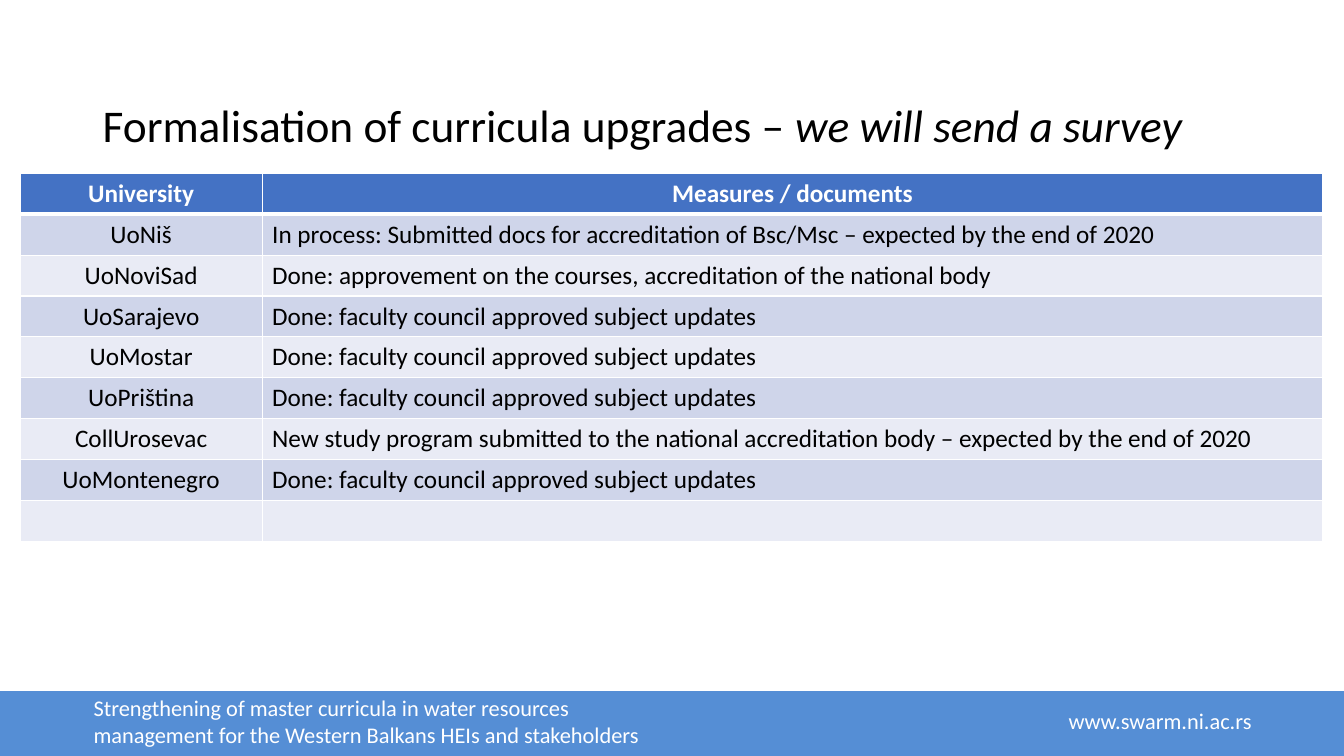
from lxml import etree
from pptx import Presentation, util as u
from pptx.dml.color import RGBColor
from pptx.enum import shapes, text
from pptx.oxml.ns import qn

COLORS = {
    "white": "FFFFFF",
    "black": "000000",
    "footer": "558ED5",
    "header": "4472C4",
    "odd_row": "CFD5EA",
    "even_row": "E9EBF5",
}
APPROVED = "Done: faculty council approved subject updates"
ROWS = [
    ("University", "Measures / documents"),
    ("UoNiš", "In process: Submitted docs for accreditation of Bsc/Msc – expected by the end of 2020"),
    ("UoNoviSad", "Done: approvement on the courses, accreditation of the national body"),
    ("UoSarajevo", APPROVED),
    ("UoMostar", APPROVED),
    ("UoPriština", APPROVED),
    ("CollUrosevac", "New study program submitted to the national accreditation body – expected by the end of 2020"),
    ("UoMontenegro", APPROVED),
    ("", ""),
]


def rgb(name):
    return RGBColor.from_string(COLORS[name])


def write(paragraph, words, font="Calibri", size=18, color="black", bold=False, italic=False, align=None):
    if align is not None:
        paragraph.alignment = align
    run = paragraph.add_run()
    run.text = words
    run.font.name = font
    run.font.size = u.Pt(size)
    run.font.color.rgb = rgb(color)
    run.font.bold = bold
    run.font.italic = italic


class SlideBuilder:
    def __init__(self, slide):
        self.slide = slide

    def bar(self, box, color):
        shape = self.slide.shapes.add_shape(
            shapes.MSO_SHAPE.FLOWCHART_PROCESS, *map(u.Inches, box))
        shape.shadow.inherit = False
        shape.fill.solid()
        shape.fill.fore_color.rgb = rgb(color)
        shape.line.fill.background()

    def text_box(self, box, runs, anchor=text.MSO_ANCHOR.TOP, spacing=1.0, right_inset=0.1, **style):
        frame = self.slide.shapes.add_textbox(*map(u.Inches, box)).text_frame
        frame.word_wrap = True
        frame.vertical_anchor = anchor
        frame.margin_right = u.Inches(right_inset)
        paragraph = frame.paragraphs[0]
        paragraph.line_spacing = spacing
        for words, extra in runs:
            write(paragraph, words, **style, **extra)

    def border(self, cell, side, width):
        properties = cell._tc.get_or_add_tcPr()
        line = etree.SubElement(properties, qn(f"a:{side}"), w=str(u.Pt(width)))
        fill = etree.SubElement(line, qn("a:solidFill"))
        etree.SubElement(fill, qn("a:srgbClr"), val=COLORS["white"])

    def table(self, box, widths, rows):
        table = self.slide.shapes.add_table(
            len(rows), len(widths), *map(u.Inches, box)).table
        for column, width in zip(table.columns, widths):
            column.width = u.Inches(width)
        for row_index, row in enumerate(rows):
            is_header = row_index == 0
            fill = "header" if is_header else "odd_row" if row_index % 2 else "even_row"
            for column_index, words in enumerate(row):
                cell = table.cell(row_index, column_index)
                for side in ("lnL", "lnR", "lnT", "lnB"):
                    thick = (is_header and side == "lnB") or (row_index == 1 and side == "lnT")
                    self.border(cell, side, 3 if thick else 1)
                cell.fill.solid()
                cell.fill.fore_color.rgb = rgb(fill)
                if words:
                    centered = is_header or column_index == 0
                    write(cell.text_frame.paragraphs[0], words, bold=is_header,
                          color="white" if is_header else "black",
                          align=text.PP_ALIGN.CENTER if centered else text.PP_ALIGN.LEFT)


def main():
    presentation = Presentation()
    presentation.slide_width = u.Inches(13.33)
    presentation.slide_height = u.Inches(7.5)
    builder = SlideBuilder(presentation.slides.add_slide(presentation.slide_layouts[6]))

    builder.bar((0, 6.86, 13.33, 0.64), "footer")
    builder.text_box(
        (0.83, 6.84, 6.15, 0.64),
        [("Strengthening of master curricula in water resources "
          "management for the Western Balkans HEIs and stakeholders", {})],
        right_inset=0.4, size=16, color="white")
    builder.text_box((10.5, 6.97, 2.16, 0.4), [("www.swarm.ni.ac.rs", {})], size=16, color="white")
    builder.text_box(
        (0.92, 0.69, 11.86, 1.16),
        [("Formalisation of curricula upgrades – ", {}), ("we will send a survey", {"italic": True})],
        anchor=text.MSO_ANCHOR.MIDDLE, spacing=0.9, size=32.4)
    builder.table((0.2, 1.72, 12.93, 3.65), (2.4, 10.52), ROWS)

    presentation.save("out.pptx")


if __name__ == "__main__":
    main()
